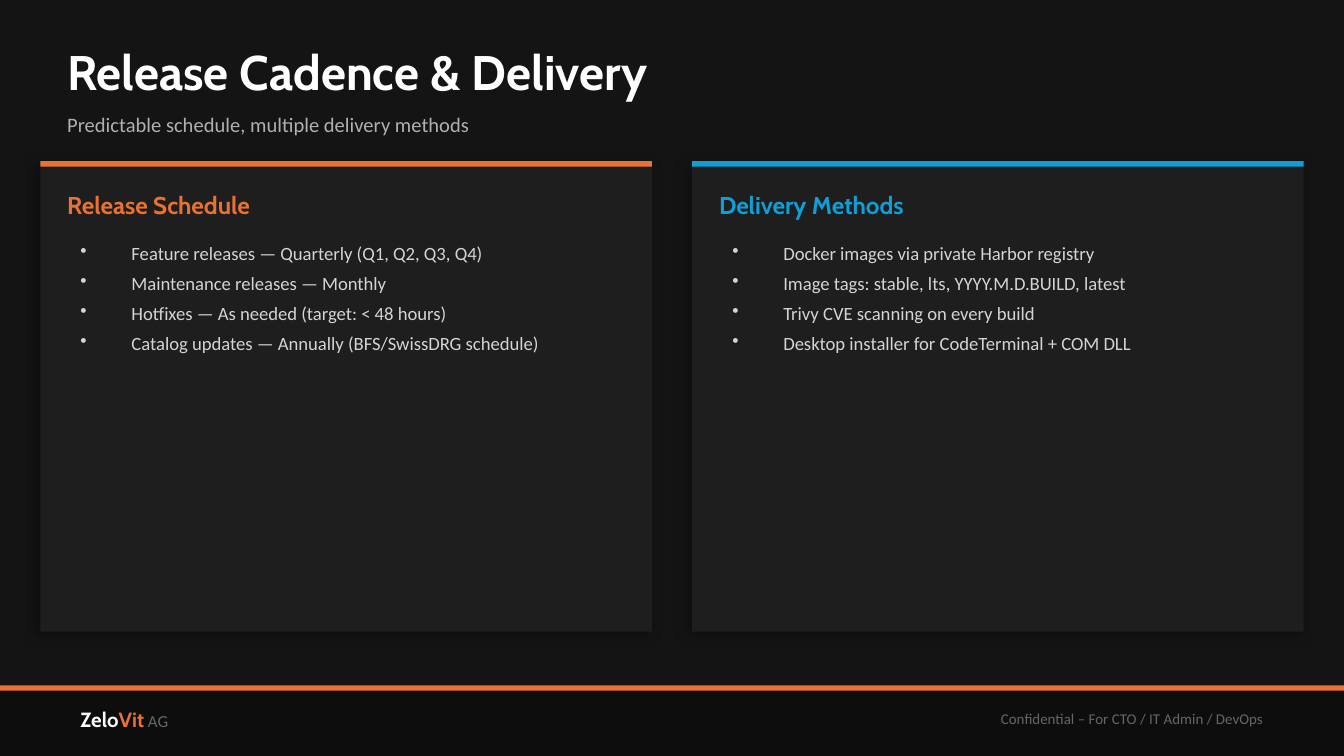
import pptx
import pptx.dml.color
import pptx.enum.shapes
import pptx.enum.text
import pptx.oxml
import pptx.oxml.ns
import pptx.util
from lxml import etree

Inches = pptx.util.Inches
Pt = pptx.util.Pt
ALIGN = pptx.enum.text.PP_ALIGN
ANCHOR = pptx.enum.text.MSO_ANCHOR
qn = pptx.oxml.ns.qn

# A 16:9 slide
WIDE = 10
HIGH = WIDE * 9 / 16
HEAD, BODY = "Cabin", "Calibri"
COLORS = {
    "back": "141414", "foot": "0D0D0D", "card": "1E1E1E",
    "orange": "E97132", "blue": "0F9ED5", "white": "FFFFFF",
    "soft": "B0B0B0", "text": "D4D4D4", "dim": "666666", "black": "000000",
}
CARDS = [
    ("Release Schedule", "orange", [
        "Feature releases — Quarterly (Q1, Q2, Q3, Q4)",
        "Maintenance releases — Monthly",
        "Hotfixes — As needed (target: < 48 hours)",
        "Catalog updates — Annually (BFS/SwissDRG schedule)",
    ]),
    ("Delivery Methods", "blue", [
        "Docker images via private Harbor registry",
        "Image tags: stable, lts, YYYY.M.D.BUILD, latest",
        "Trivy CVE scanning on every build",
        "Desktop installer for CodeTerminal + COM DLL",
    ]),
]


def rgb(name):
    return pptx.dml.color.RGBColor.from_string(COLORS[name])


def add_rect(slide, x, y, w, h, color):
    rect = slide.shapes.add_shape(
        pptx.enum.shapes.MSO_SHAPE.RECTANGLE,
        Inches(x), Inches(y), Inches(w), Inches(h))
    rect.fill.solid()
    rect.fill.fore_color.rgb = rgb(color)
    rect.line.fill.background()
    rect.shadow.inherit = False
    return rect


def add_shade(shape):
    """Give a shape a soft black shadow."""
    effects = shape._element.spPr.find(qn("a:effectLst"))
    outer = etree.SubElement(
        effects, qn("a:outerShdw"), blurRad=str(Pt(8)), dist=str(Pt(3)),
        dir=str(135 * 60000), algn="bl", rotWithShape="0")
    color = etree.SubElement(outer, qn("a:srgbClr"), val=COLORS["black"])
    etree.SubElement(color, qn("a:alpha"), val="35000")


def add_bullet(para):
    props = para._p.get_or_add_pPr()
    props.set("marL", str(Inches(0.38)))
    props.set("indent", str(-Inches(0.38)))
    etree.SubElement(props, qn("a:buSzPct"), val="100000")
    etree.SubElement(props, qn("a:buChar"), char="•")
    para.space_after = Pt(4)


def add_text(slide, x, y, w, h, lines, size=10, font=BODY, color="text",
             bold=False, align=ALIGN.LEFT, anchor=ANCHOR.MIDDLE,
             inset=True, bullet=False):
    """Each line is a string, or a list of (text, format) runs."""
    box = slide.shapes.add_textbox(Inches(x), Inches(y), Inches(w), Inches(h))
    frame = box.text_frame
    frame.word_wrap = True
    frame.vertical_anchor = anchor
    if not inset:
        frame.margin_left = frame.margin_right = 0
        frame.margin_top = frame.margin_bottom = 0
    for i, line in enumerate(lines):
        para = frame.add_paragraph() if i else frame.paragraphs[0]
        para.alignment = align
        if bullet:
            add_bullet(para)
        for text, own in [(line, {})] if isinstance(line, str) else line:
            run = para.add_run()
            run.text = text
            run.font.size = Pt(own.get("size", size))
            run.font.name = own.get("font", font)
            run.font.bold = own.get("bold", bold)
            run.font.color.rgb = rgb(own.get("color", color))


def add_footer(slide, x, y, w, h):
    add_rect(slide, x, y, w, h, "foot")
    add_rect(slide, x, y, w, 0.04, "orange")
    name = [("Zelo", {}), ("Vit", {"color": "orange"}),
            (" AG", {"size": 9, "font": BODY, "color": "dim", "bold": False})]
    add_text(slide, x + 0.5, y + 0.05, 3, 0.4, [name],
             size=11, font=HEAD, color="white", bold=True)
    add_text(slide, x + w - 4.5, y + 0.05, 4, 0.4,
             ["Confidential – For CTO / IT Admin / DevOps"],
             size=8, color="dim", align=ALIGN.RIGHT)


def add_header(slide, x, y, w):
    add_text(slide, x, y, w, 0.55, ["Release Cadence & Delivery"],
             size=26, font=HEAD, color="white", bold=True, inset=False)
    add_text(slide, x, y + 0.5, w, 0.35,
             ["Predictable schedule, multiple delivery methods"],
             size=11, color="soft", inset=False)


def add_card(slide, x, y, w, h, title, color, items):
    add_shade(add_rect(slide, x, y, w, h, "card"))
    add_rect(slide, x, y, w, 0.04, color)
    add_text(slide, x + 0.2, y + 0.15, w - 0.4, 0.35, [title],
             size=13, font=HEAD, color=color, bold=True, inset=False)
    add_text(slide, x + 0.2, y + 0.55, w - 0.4, h - 0.7, items,
             anchor=ANCHOR.TOP, bullet=True)


def main():
    deck = pptx.Presentation()
    deck.slide_width, deck.slide_height = Inches(WIDE), Inches(HIGH)
    slide = deck.slides.add_slide(deck.slide_layouts[6])
    slide.background.fill.solid()
    slide.background.fill.fore_color.rgb = rgb("back")

    add_footer(slide, 0, 5.1, WIDE, HIGH - 5.1)
    add_header(slide, 0.5, 0.25, 9)

    # Two equal cards between the side margins
    edge, gap = 0.3, 0.3
    width = (WIDE - 2 * edge - gap) / 2
    for i, card in enumerate(CARDS):
        add_card(slide, edge + i * (width + gap), 1.2, width, 3.5, *card)

    deck.save("out.pptx")


if __name__ == "__main__":
    main()
